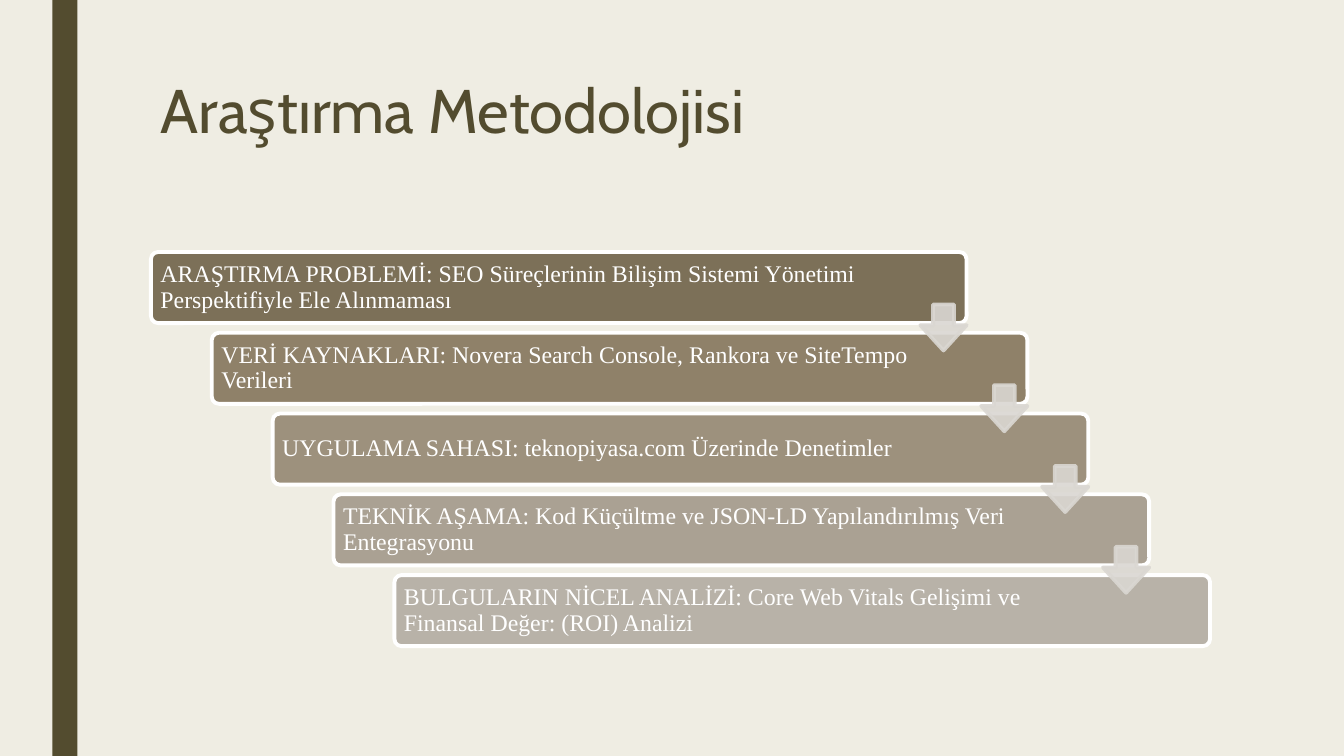
from lxml import etree
from pptx import Presentation
from pptx.dml.color import RGBColor
from pptx.enum.shapes import MSO_SHAPE
from pptx.enum.text import MSO_ANCHOR
from pptx.oxml.ns import qn
from pptx.util import Inches, Pt

RECT, ROUNDED, DOWN = MSO_SHAPE.RECTANGLE, MSO_SHAPE.ROUNDED_RECTANGLE, MSO_SHAPE.DOWN_ARROW
TOP, MIDDLE = MSO_ANCHOR.TOP, MSO_ANCHOR.MIDDLE

CREAM = RGBColor(0xEF, 0xED, 0xE3)
OLIVE = RGBColor(0x53, 0x4C, 0x2F)
WHITE = RGBColor(0xFF, 0xFF, 0xFF)
ARROW = RGBColor(0xDA, 0xD7, 0xD2)
BROWN_1 = RGBColor(0x7C, 0x70, 0x58)
BROWN_2 = RGBColor(0x8F, 0x81, 0x69)
BROWN_3 = RGBColor(0x9D, 0x91, 0x7D)
BROWN_4 = RGBColor(0xAA, 0xA1, 0x93)
BROWN_5 = RGBColor(0xB8, 0xB2, 0xA8)

COLS, ROWS = 22.08, 9.36
LEFT, FIRST_ROW = 2.48, 3.12
BAR_W, BAR_H = 13.4, 0.88
ARROW_W, ARROW_H = 0.76, 0.57

TITLE = {
    "font": {"name": "Cabin", "size": Pt(44)},
    "color": OLIVE,
    "frame": {"word_wrap": True, "vertical_anchor": TOP},
    "spacing": 0.89,
}
STEP = {
    "font": {"name": "Times New Roman", "size": Pt(17)},
    "color": WHITE,
    "frame": {
        "word_wrap": True,
        "vertical_anchor": MIDDLE,
        "margin_left": Inches(0.07),
        "margin_right": Inches(0.07),
        "margin_top": Inches(0.07),
        "margin_bottom": Inches(0.07),
    },
    "spacing": 0.9,
}

STEPS = [
    (BROWN_1, 12, "ARAŞTIRMA PROBLEMİ: SEO Süreçlerinin Bilişim Sistemi Yönetimi "
                  "Perspektifiyle Ele Alınmaması"),
    (BROWN_2, 11.56, "VERİ KAYNAKLARI: Novera Search Console, Rankora ve "
                     "SiteTempo Verileri"),
    (BROWN_3, 11.56, "UYGULAMA SAHASI: teknopiyasa.com Üzerinde Denetimler"),
    (BROWN_4, 11.56, "TEKNİK AŞAMA: Kod Küçültme ve JSON-LD Yapılandırılmış Veri "
                     "Entegrasyonu"),
    (BROWN_5, 11.56, "BULGULARIN NİCEL ANALİZİ: Core Web Vitals Gelişimi ve "
                     "Finansal Değer: (ROI) Analizi"),
]


class Deck:
    """Holds the grid, the style and the current slide."""

    def __init__(self):
        self.prs = Presentation()
        self.prs.slide_width, self.prs.slide_height = Inches(13.33), Inches(7.5)
        self.col = self.prs.slide_width / COLS
        self.row = self.prs.slide_height / ROWS
        self.s = self.prs.slides.add_slide(self.prs.slide_layouts[6])
        self.s.background.fill.solid()
        self.s.background.fill.fore_color.rgb = CREAM

    def box(self, x, y, w, h):
        """Turn columns and rows into slide lengths."""
        return [round(v) for v in (x * self.col, y * self.row, w * self.col, h * self.row)]

    def shape(self, kind, area, fill, line=None, adj=(), alpha=None):
        """Add a filled preset shape."""
        sp = self.s.shapes.add_shape(kind, *self.box(*area))
        sp.shadow.inherit = False
        for i, value in enumerate(adj):
            sp.adjustments[i] = value
        sp.fill.solid()
        sp.fill.fore_color.rgb = fill
        if line is None:
            sp.line.fill.background()
        else:
            sp.line.color.rgb = line
            sp.line.width = Pt(2.75)
        if alpha is not None:
            for clr in sp.element.spPr.iter(qn("a:srgbClr")):
                etree.SubElement(clr, qn("a:alpha")).set("val", str(alpha * 1000))

    def text(self, area, words, style):
        """Add a one-paragraph text box."""
        tf = self.s.shapes.add_textbox(*self.box(*area)).text_frame
        for name, value in style["frame"].items():
            setattr(tf, name, value)
        p = tf.paragraphs[0]
        p.line_spacing = style["spacing"]
        r = p.add_run()
        r.text = words
        for name, value in style["font"].items():
            setattr(r.font, name, value)
        r.font.color.rgb = style["color"]

    def step(self, i, fill, text_w, words):
        """Add one bar of the staircase with its text."""
        x, y = LEFT + i, FIRST_ROW + i
        self.shape(ROUNDED, (x, y, BAR_W, BAR_H), fill, WHITE, (0.1,))
        self.text((x + 0.04, y + 0.03, text_w, 0.82), words, STEP)

    def arrow(self, i):
        """Add the arrow from one bar down to the next."""
        x, y = LEFT + i + BAR_W - ARROW_W, FIRST_ROW + i + 0.65
        self.shape(DOWN, (x, y, ARROW_W, ARROW_H), ARROW, ARROW, (0.45, 0.55), 90)


def main():
    """Build the slide and save it."""
    deck = Deck()
    deck.shape(RECT, (0.86, 0, 0.41, ROWS), OLIVE)
    deck.text((LEFT, 0.94, 17.4, 2.02), "Araştırma Metodolojisi", TITLE)
    for i, (fill, text_w, words) in enumerate(STEPS):
        deck.step(i, fill, text_w, words)
    for i in range(len(STEPS) - 1):
        deck.arrow(i)
    deck.prs.save("out.pptx")


if __name__ == "__main__":
    main()
